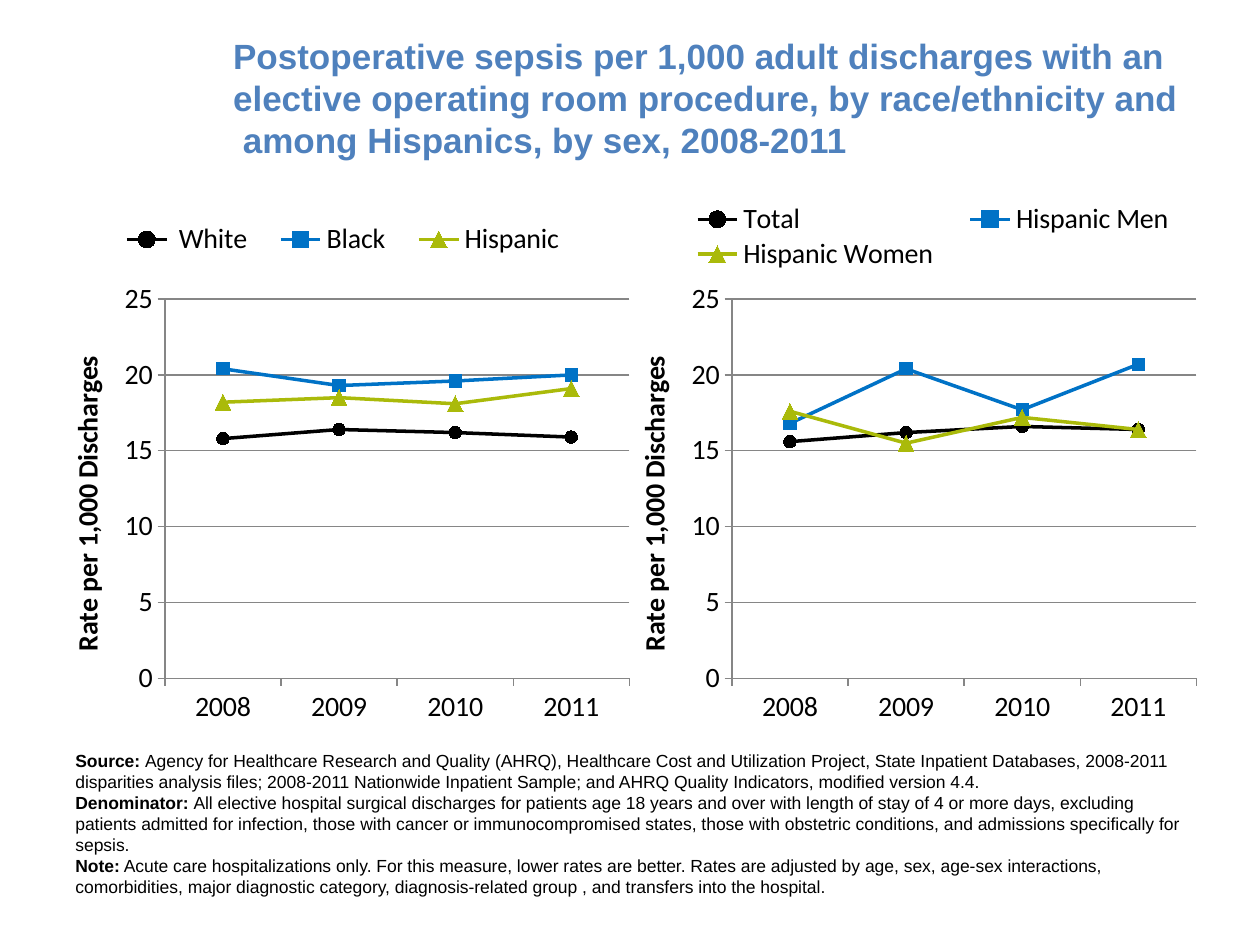
from lxml.etree import SubElement
from pptx import Presentation
from pptx.chart.data import CategoryChartData
from pptx.dml.color import RGBColor
from pptx.enum.chart import XL_CHART_TYPE, XL_LEGEND_POSITION, XL_MARKER_STYLE, XL_TICK_MARK
from pptx.enum.text import MSO_ANCHOR, PP_ALIGN
from pptx.oxml.ns import qn
from pptx.util import Inches, Pt

COLORS = {"title": "4F81BD", "text": "000000", "axis": "868686",
          "black": "000000", "blue": "0072C6", "green": "AABA0A"}
TITLE_LINES = ["Postoperative sepsis per 1,000 adult discharges with an elective "
               "operating room procedure, by race/ethnicity and",
               " among Hispanics, by sex, 2008-2011"]
YEARS = ["2008", "2009", "2010", "2011"]
AXIS_TITLE = "Rate per 1,000 Discharges"
# Legend boxes are x, y, width, height as shares of the chart.
CHARTS = [
    {"legend": (0.07, 0.03, 0.86, 0.08),
     "series": [(" White", (15.8, 16.4, 16.2, 15.9)),
                ("Black", (20.4, 19.3, 19.6, 20)),
                ("Hispanic ", (18.2, 18.5, 18.1, 19.1))]},
    {"legend": (0.07, 0, 0.93, 0.13),
     "series": [("Total", (15.6, 16.2, 16.6, 16.4)),
                ("Hispanic Men", (16.8, 20.4, 17.7, 20.7)),
                ("Hispanic Women", (17.6, 15.5, 17.2, 16.4))]},
]
SERIES_STYLES = [("black", XL_MARKER_STYLE.CIRCLE, 7),
                 ("blue", XL_MARKER_STYLE.SQUARE, 7),
                 ("green", XL_MARKER_STYLE.TRIANGLE, 9)]
PLOT_BOX = (0.18, 0.18, 0.82, 0.7)
NOTES = [
    ("Source: ", "Agency for Healthcare Research and Quality (AHRQ), Healthcare Cost and "
     "Utilization Project, State Inpatient Databases, 2008‐2011 disparities analysis files; "
     "2008‐2011 Nationwide Inpatient Sample; and AHRQ Quality Indicators, modified version 4.4."),
    ("Denominator: ", "All elective hospital surgical discharges for patients age 18 years and "
     "over with length of stay of 4 or more days, excluding patients admitted for infection, "
     "those with cancer or immunocompromised states, those with obstetric conditions, and "
     "admissions specifically for sepsis."),
    ("Note:", " Acute care hospitalizations only. For this measure, lower rates are better. "
     "Rates are adjusted by age, sex, age-sex interactions, comorbidities, major diagnostic "
     "category, diagnosis-related group , and transfers into the hospital."),
]
MARGIN, CHART_TOP, CHART_WIDTH, CHART_HEIGHT = 0.5, 1.6, 4.5, 4.3


def color(name):
    return RGBColor.from_string(COLORS[name])


def set_font(font, name, size, color_name="text", bold=False):
    font.name, font.size, font.bold = name, Pt(size), bold
    font.color.rgb = color(color_name)


def set_layout(parent, index, box, inner=False):
    """Fix the place of a chart part, given as shares of the chart."""
    for old in parent.findall(qn("c:layout")):
        parent.remove(old)
    layout = SubElement(parent, qn("c:layout"))
    parent.insert(index, layout)
    manual = SubElement(layout, qn("c:manualLayout"))
    settings = [("layoutTarget", "inner")] if inner else []
    settings += [("xMode", "edge"), ("yMode", "edge"), *zip("xywh", box)]
    for tag, value in settings:
        SubElement(manual, qn(f"c:{tag}")).set("val", str(value))


def style_axis(axis):
    axis.major_tick_mark = XL_TICK_MARK.OUTSIDE
    axis.minor_tick_mark = XL_TICK_MARK.NONE
    axis.format.line.color.rgb = color("axis")
    axis.format.line.width = Pt(0.75)
    set_font(axis.tick_labels.font, "Calibri", 16)


def add_line_chart(slide, column, content):
    data = CategoryChartData(number_format="0.0")
    data.categories = YEARS
    for name, values in content["series"]:
        data.add_series(name, values)
    chart = slide.shapes.add_chart(
        XL_CHART_TYPE.LINE_MARKERS, Inches(MARGIN + column * CHART_WIDTH), Inches(CHART_TOP),
        Inches(CHART_WIDTH), Inches(CHART_HEIGHT), data).chart
    chart.has_title = False
    set_font(chart.font, "Arial", 10)
    chart.plots[0].vary_by_categories = False

    style_axis(chart.category_axis)
    axis = chart.value_axis
    style_axis(axis)
    axis.minimum_scale, axis.maximum_scale, axis.major_unit = 0, 25, 5
    axis.tick_labels.number_format = "0"
    axis.tick_labels.number_format_is_linked = False
    axis.major_gridlines.format.line.color.rgb = color("axis")
    axis.major_gridlines.format.line.width = Pt(0.75)
    run = axis.axis_title.text_frame.paragraphs[0].add_run()
    run.text = AXIS_TITLE
    set_font(run.font, "Calibri", 16, bold=True)

    chart.has_legend = True
    legend = chart.legend
    legend.position = XL_LEGEND_POSITION.TOP
    legend.include_in_layout = False
    set_font(legend.font, "Calibri", 16)

    for series, (color_name, marker, size) in zip(chart.plots[0].series, SERIES_STYLES):
        series.smooth = False
        series.format.line.color.rgb = color(color_name)
        series.format.line.width = Pt(2)
        series.marker.style, series.marker.size = marker, size
        series.marker.format.fill.solid()
        series.marker.format.fill.fore_color.rgb = color(color_name)
        series.marker.format.line.color.rgb = color(color_name)

    plot_area = chart.element.find(".//" + qn("c:plotArea"))
    set_layout(plot_area, 0, PLOT_BOX, inner=True)
    set_layout(chart.element.find(".//" + qn("c:legend")), 1, content["legend"])


def add_title(slide):
    title = slide.shapes.title
    title.left, title.top = Inches(1.75), Inches(0.3)
    title.width, title.height = Inches(7.75), Inches(0.95)
    title.text_frame.vertical_anchor = MSO_ANCHOR.MIDDLE
    title.text_frame.word_wrap = True
    paragraph = title.text_frame.paragraphs[0]
    paragraph.alignment = PP_ALIGN.LEFT
    for index, line in enumerate(TITLE_LINES):
        if index:
            paragraph.add_line_break()
        run = paragraph.add_run()
        run.text = line
        set_font(run.font, "Arial", 20, "title", bold=True)


def add_notes(slide):
    box = slide.shapes.add_textbox(Inches(MARGIN), Inches(CHART_TOP + CHART_HEIGHT),
                                   Inches(2 * CHART_WIDTH), Inches(1.28))
    frame = box.text_frame
    frame.word_wrap = True
    for index, note in enumerate(NOTES):
        paragraph = frame.add_paragraph() if index else frame.paragraphs[0]
        for text, bold in zip(note, (True, False)):
            run = paragraph.add_run()
            run.text = text
            set_font(run.font, "Arial", 10, bold=bold)


def main():
    presentation = Presentation()
    presentation.slide_width, presentation.slide_height = Inches(10), Inches(7.5)
    slide = presentation.slides.add_slide(presentation.slide_layouts[5])
    add_title(slide)
    for column, content in enumerate(CHARTS):
        add_line_chart(slide, column, content)
    add_notes(slide)
    presentation.save("out.pptx")


if __name__ == "__main__":
    main()
